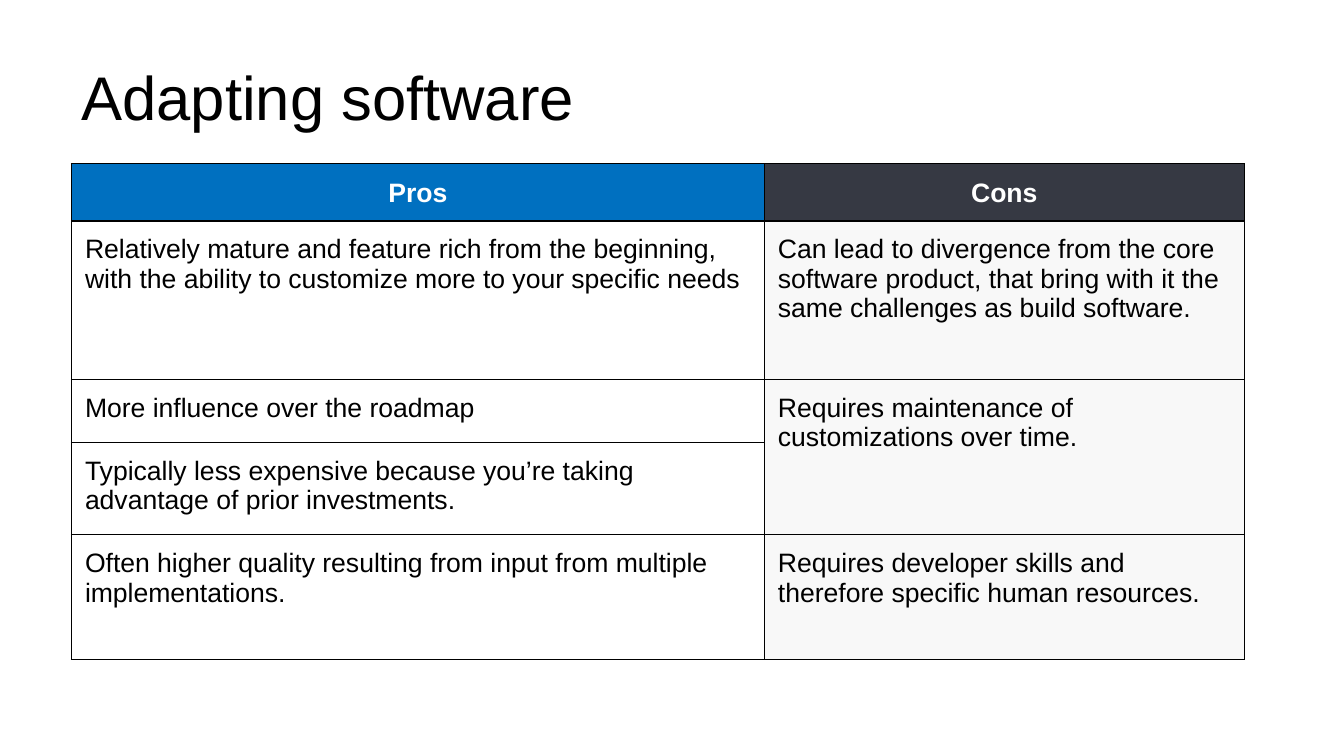
from dataclasses import dataclass

from lxml import etree
from pptx import Presentation
from pptx import util as u
from pptx.dml.color import RGBColor
from pptx.enum import text
from pptx.oxml import ns

PX = 9525


@dataclass(frozen=True)
class Theme:
    """Colours, font and type sizes of the slide."""
    font: str = "Arial"
    title_size: int = 44
    table_size: int = 19
    ink: str = "000000"
    paper: str = "FFFFFF"
    pros: str = "0070C0"
    cons: str = "363943"
    cons_body: str = "F8F8F8"


THEME = Theme()
HEADERS = [("Pros", THEME.pros), ("Cons", THEME.cons)]
PROS = [
    "Relatively mature and feature rich from the beginning, "
    "with the ability to customize more to your specific needs",
    "More influence over the roadmap",
    "Typically less expensive because you’re taking advantage of prior investments.",
    "Often higher quality resulting from input from multiple implementations.",
]
CONS = [
    "Can lead to divergence from the core software product, "
    "that bring with it the same challenges as build software.",
    "Requires maintenance of customizations over time.",
    None,
    "Requires developer skills and therefore specific human resources.",
]


def px(n):
    """Turn whole pixels into EMU."""
    return u.Emu(n * PX)


def write(tf, words, size, color=THEME.ink, bold=False,
          align=text.PP_ALIGN.LEFT, spacing=1.0):
    """Write one formatted paragraph into a text frame."""
    tf.word_wrap = True
    p = tf.paragraphs[0]
    p.alignment = align
    p.line_spacing = spacing
    r = p.add_run()
    r.text = words
    r.font.name = THEME.font
    r.font.size = u.Pt(size)
    r.font.bold = bold
    r.font.color.rgb = RGBColor.from_string(color)


def style_cell(cell, fill=None, bottom=13):
    """Give a cell its margins, thin borders and fill."""
    cell.margin_left = cell.margin_right = cell.margin_top = px(13)
    cell.margin_bottom = px(bottom)
    tcPr = cell._tc.get_or_add_tcPr()
    for side in ("a:lnL", "a:lnR", "a:lnT", "a:lnB"):
        ln = etree.SubElement(tcPr, ns.qn(side), w=str(u.Pt(1)))
        solid = etree.SubElement(ln, ns.qn("a:solidFill"))
        etree.SubElement(solid, ns.qn("a:srgbClr"), val=THEME.ink)
    if fill:
        cell.fill.solid()
        cell.fill.fore_color.rgb = RGBColor.from_string(fill)
    else:
        cell.fill.background()


def add_title(s, x, y, w, h, words):
    """Place the slide title in its box."""
    tf = s.shapes.add_textbox(px(x), px(y), px(w), px(h)).text_frame
    tf.vertical_anchor = text.MSO_ANCHOR.MIDDLE
    write(tf, words, THEME.title_size, spacing=0.9)


def add_comparison(s, x, y, cols, rows):
    """Place the pros and cons table from its top left corner."""
    table = s.shapes.add_table(len(rows), len(cols), px(x), px(y),
                               px(sum(cols)), px(sum(rows))).table
    table.horz_banding = False
    for col, width in zip(table.columns, cols):
        col.width = px(width)
    for row, height in zip(table.rows, rows):
        row.height = px(height)
    for c, (words, fill) in enumerate(HEADERS):
        cell = table.cell(0, c)
        style_cell(cell, fill, bottom=11)
        cell.vertical_anchor = text.MSO_ANCHOR.MIDDLE
        write(cell.text_frame, words, THEME.table_size, THEME.paper,
              bold=True, align=text.PP_ALIGN.CENTER)
    for c, (items, fill) in enumerate([(PROS, None), (CONS, THEME.cons_body)]):
        for r, words in enumerate(items, start=1):
            cell = table.cell(r, c)
            style_cell(cell, fill)
            if words:
                write(cell.text_frame, words, THEME.table_size)
            else:
                table.cell(r - 1, c).merge(cell)


def main():
    """Build and save the slide."""
    prs = Presentation()
    prs.slide_width, prs.slide_height = px(1280), px(720)
    s = prs.slides.add_slide(prs.slide_layouts[6])
    add_title(s, 68, 14, 1059, 164, "Adapting software")
    add_comparison(s, 68, 156, cols=[660, 457], rows=[54, 151, 60, 88, 119])
    prs.save("out.pptx")


if __name__ == "__main__":
    main()
